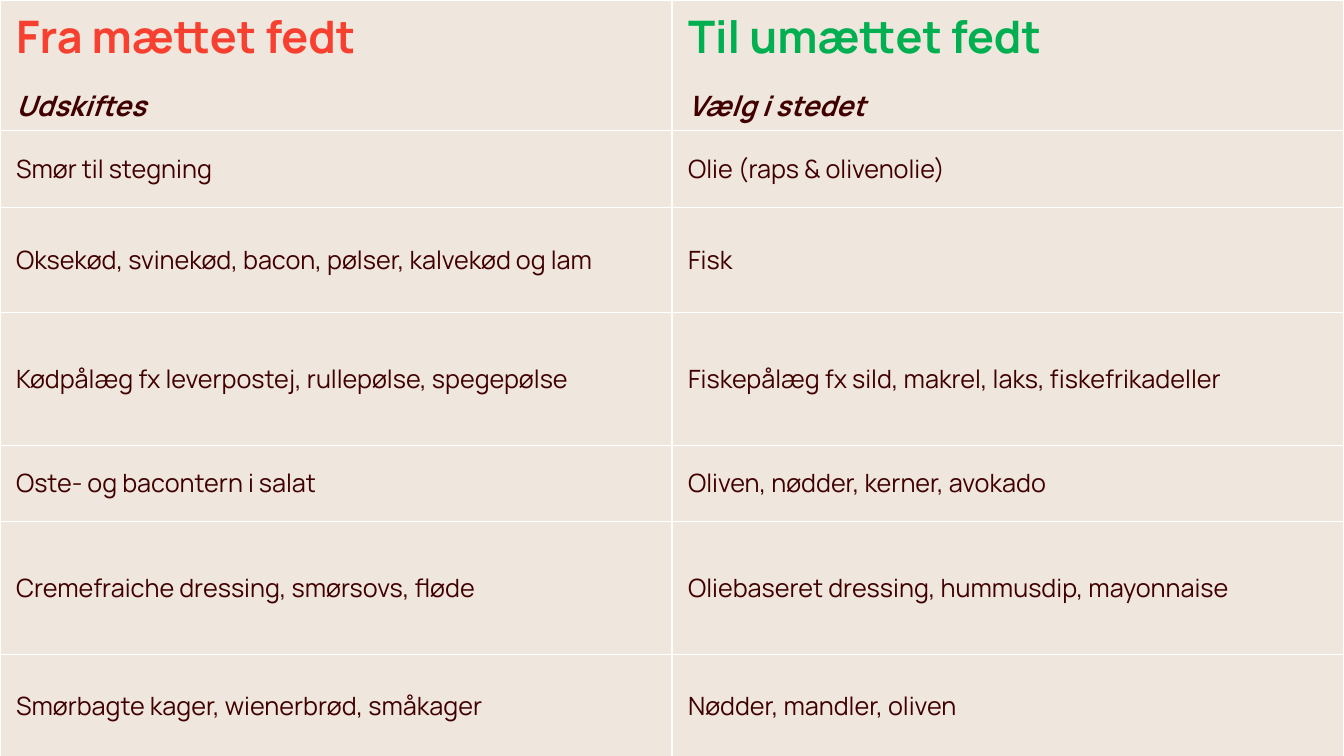
from lxml.etree import SubElement
from pptx import Presentation
from pptx.dml.color import RGBColor
from pptx.enum.text import MSO_ANCHOR
from pptx.oxml.ns import qn
from pptx.util import Pt

COLORS = {
    "cell": "EFE6DD",
    "border": "FFFFFF",
    "text": "400000",
    "from": "F74030",
    "to": "00B050",
}
FONT = "Manrope"
WIDTH, HEIGHT = 960, 540
HEADINGS = [
    ("Fra mættet fedt", "Udskiftes", "from"),
    ("Til umættet fedt", "Vælg i stedet", "to"),
]
SWAPS = [
    ("Smør til stegning", "Olie (raps & olivenolie)", 54.5),
    ("Oksekød, svinekød, bacon, pølser, kalvekød og lam", "Fisk", 75),
    ("Kødpålæg fx leverpostej, rullepølse, spegepølse",
     "Fiskepålæg fx sild, makrel, laks, fiskefrikadeller", 95),
    ("Oste- og bacontern i salat", "Oliven, nødder, kerner, avokado", 54.5),
    ("Cremefraiche dressing, smørsovs, fløde",
     "Oliebaseret dressing, hummusdip, mayonnaise", 95),
    ("Smørbagte kager, wienerbrød, småkager", "Nødder, mandler, oliven", 74),
]
HEADING_HEIGHT = HEIGHT - sum(height for _, _, height in SWAPS)


def write(p, text, size=18, color="text", bold=False, italic=False, spacing=None):
    p._p.get_or_add_pPr().set("marL", str(Pt(7.2)))
    p.line_spacing = spacing
    r = p.add_run()
    r.text = text
    r.font.name = FONT
    r.font.size = Pt(size)
    r.font.bold = bold
    r.font.italic = italic
    r.font.color.rgb = RGBColor.from_string(COLORS[color])


def style_cell(cell):
    cell.vertical_anchor = MSO_ANCHOR.MIDDLE
    cell.margin_left = cell.margin_right = Pt(4.3)
    cell.margin_top = cell.margin_bottom = Pt(4.3)
    tcPr = cell._tc.get_or_add_tcPr()
    for side in ("a:lnL", "a:lnR", "a:lnT", "a:lnB"):
        ln = SubElement(tcPr, qn(side), w=str(Pt(1)))
        fill = SubElement(ln, qn("a:solidFill"))
        SubElement(fill, qn("a:srgbClr"), val=COLORS["border"])
    cell.fill.solid()
    cell.fill.fore_color.rgb = RGBColor.from_string(COLORS["cell"])


def add_swap_table(s, left, top, width, height):
    frame = s.shapes.add_table(len(SWAPS) + 1, len(HEADINGS),
                               Pt(left), Pt(top), Pt(width), Pt(height))
    table = frame.table
    table.horz_banding = False
    scale = height / HEIGHT
    for column in table.columns:
        column.width = Pt(width / len(HEADINGS))
    heights = [HEADING_HEIGHT] + [row_height for _, _, row_height in SWAPS]
    for row, row_height in zip(table.rows, heights):
        row.height = Pt(row_height * scale)
    for cell in table.iter_cells():
        style_cell(cell)
    for col, (title, subtitle, color) in enumerate(HEADINGS):
        tf = table.cell(0, col).text_frame
        write(tf.paragraphs[0], title, size=32, color=color, bold=True)
        write(tf.add_paragraph(), subtitle, size=20, bold=True, italic=True, spacing=1.5)
    for row, (*foods, _) in enumerate(SWAPS, 1):
        for col, food in enumerate(foods):
            write(table.cell(row, col).text_frame.paragraphs[0], food)


def main():
    prs = Presentation()
    prs.slide_width, prs.slide_height = Pt(WIDTH), Pt(HEIGHT)
    s = prs.slides.add_slide(prs.slide_layouts[6])
    add_swap_table(s, 0, 0, WIDTH, HEIGHT)
    prs.save("out.pptx")


if __name__ == "__main__":
    main()
